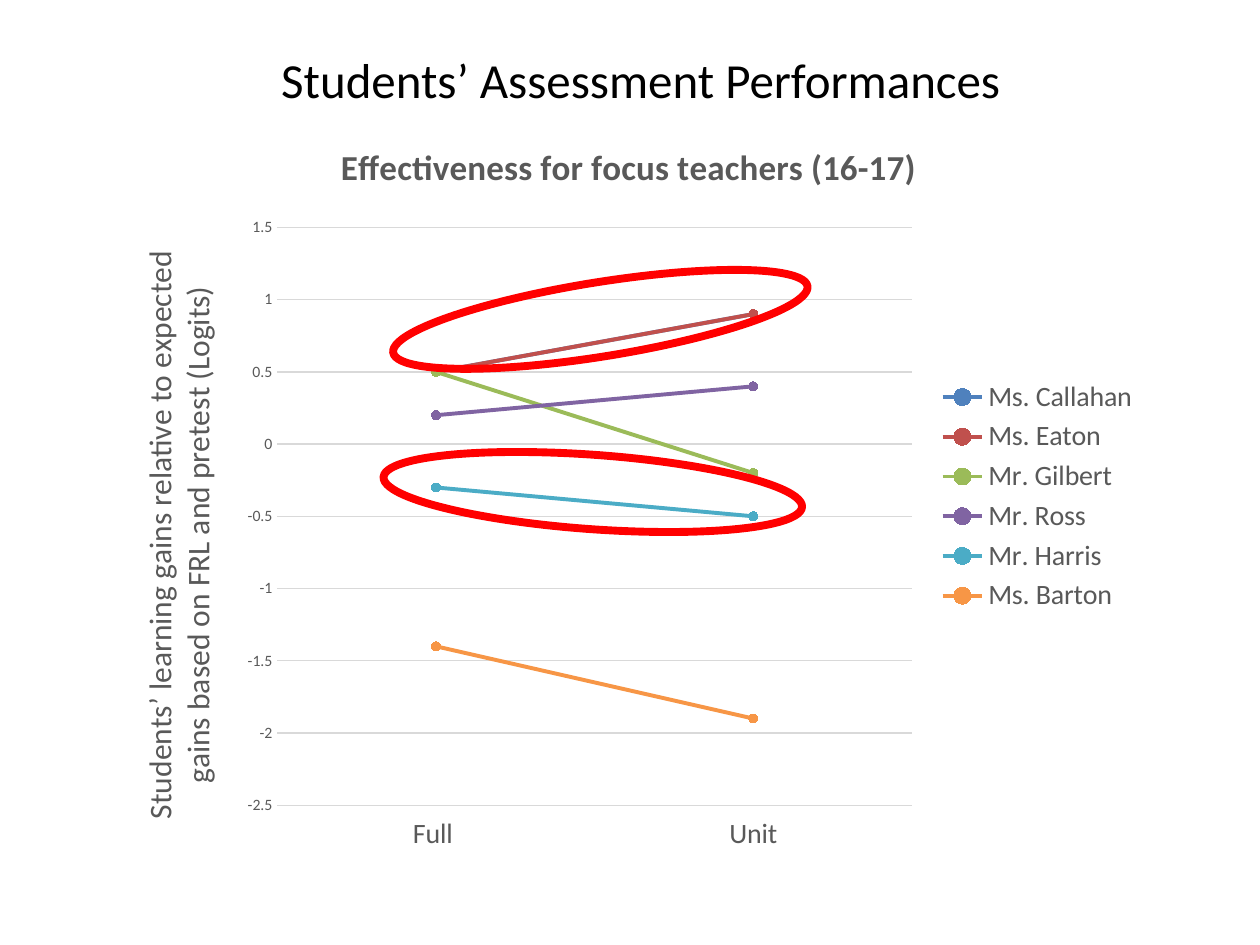
from typing import NamedTuple

from lxml import etree
from pptx import Presentation
from pptx.chart.data import CategoryChartData
from pptx.dml.color import RGBColor
from pptx.enum.chart import (XL_CHART_TYPE, XL_LEGEND_POSITION, XL_MARKER_STYLE,
                             XL_TICK_LABEL_POSITION, XL_TICK_MARK)
from pptx.enum.shapes import MSO_SHAPE
from pptx.enum.text import MSO_ANCHOR, PP_ALIGN
from pptx.oxml.ns import qn
from pptx.util import Inches, Pt

LINE_MARKERS = XL_CHART_TYPE.LINE_MARKERS
LEGEND_RIGHT = XL_LEGEND_POSITION.RIGHT
CIRCLE = XL_MARKER_STYLE.CIRCLE
LABELS_LOW = XL_TICK_LABEL_POSITION.LOW
NO_TICK = XL_TICK_MARK.NONE
ELLIPSE = MSO_SHAPE.OVAL
MIDDLE = MSO_ANCHOR.MIDDLE
CENTER = PP_ALIGN.CENTER

SLIDE_WIDTH, SLIDE_HEIGHT = Inches(10), Inches(7.5)
FONT = "Calibri"
BLACK, GRAY, GRID_GRAY, RED = "000000", "595959", "D9D9D9", "FF0000"


class Box(NamedTuple):
    """Left, top, width and height as shares of the slide's size."""
    left: float
    top: float
    width: float
    height: float

    def lengths(self) -> tuple[int, int, int, int]:
        return (int(self.left * SLIDE_WIDTH), int(self.top * SLIDE_HEIGHT),
                int(self.width * SLIDE_WIDTH), int(self.height * SLIDE_HEIGHT))


class Teacher(NamedTuple):
    name: str
    full: float
    unit: float
    color: str


class Highlight(NamedTuple):
    box: Box
    rotation: float


TITLE_BOX = Box(0.05, 0, 0.917, 1 / 6)
CHART_BOX = Box(0.087, 1 / 7.5, 0.827, 5.88 / 7.5)
# Shares of the chart's size
PLOT_LAYOUT = {"layoutTarget": "inner", "xMode": "edge", "yMode": "edge",
               "x": 0.161, "y": 0.137, "w": 0.609, "h": 0.78}
CHART_TITLE_LAYOUT = {"xMode": "edge", "yMode": "edge", "x": 0.216, "y": 0.013}

TEACHERS = [
    Teacher("Ms. Callahan", 0.5, 0.9, "4F81BD"),
    Teacher("Ms. Eaton", 0.5, 0.9, "C0504D"),
    Teacher("Mr. Gilbert", 0.5, -0.2, "9BBB59"),
    Teacher("Mr. Ross", 0.2, 0.4, "8064A2"),
    Teacher("Mr. Harris", -0.3, -0.5, "4BACC6"),
    Teacher("Ms. Barton", -1.4, -1.9, "F79646"),
]
HIGHLIGHTS = [
    Highlight(Box(0.31, 2.24 / 7.5, 0.333, 0.59 / 7.5), 350.9),
    Highlight(Box(0.304, 3.61 / 7.5, 0.333, 0.59 / 7.5), 4.1),
]


def rgb(color: str) -> RGBColor:
    return RGBColor.from_string(color)


def style_font(font, size: float, color: str = GRAY, bold: bool = False) -> None:
    font.name = FONT
    font.size = Pt(size)
    font.bold = bold
    font.color.rgb = rgb(color)


def style_line(line, color: str, width: float) -> None:
    line.color.rgb = rgb(color)
    line.width = Pt(width)


def set_title_text(title, text: str, size: float, bold: bool = False) -> None:
    title.text_frame.text = text
    style_font(title.text_frame.paragraphs[0].runs[0].font, size, bold=bold)


def set_layout(parent, settings: dict, position: int) -> None:
    """Place a chart part by hand; position is its layout's place among the children."""
    for old_layout in parent.findall(qn("c:layout")):
        parent.remove(old_layout)
    layout = etree.Element(qn("c:layout"))
    parent.insert(position, layout)
    manual = etree.SubElement(layout, qn("c:manualLayout"))
    for tag, value in settings.items():
        etree.SubElement(manual, qn(f"c:{tag}")).set("val", str(value))


def add_title(slide) -> None:
    text_frame = slide.shapes.add_textbox(*TITLE_BOX.lengths()).text_frame
    text_frame.word_wrap = True
    text_frame.vertical_anchor = MIDDLE
    text_frame.text = "Students’ Assessment Performances"
    paragraph = text_frame.paragraphs[0]
    paragraph.alignment = CENTER
    style_font(paragraph.runs[0].font, 28, BLACK)


def style_axes(chart) -> None:
    category_axis, value_axis = chart.category_axis, chart.value_axis
    for axis, size in ((category_axis, 16), (value_axis, 9)):
        axis.major_tick_mark = axis.minor_tick_mark = NO_TICK
        style_font(axis.tick_labels.font, size)
    category_axis.tick_label_position = LABELS_LOW
    style_line(category_axis.format.line, GRID_GRAY, 0.75)
    value_axis.minimum_scale, value_axis.maximum_scale = -2.5, 1.5
    value_axis.major_unit = 0.5
    value_axis.format.line.fill.background()
    style_line(value_axis.major_gridlines.format.line, GRID_GRAY, 0.75)
    set_title_text(value_axis.axis_title,
                   "Students’ learning gains relative to expected "
                   "gains based on FRL and pretest (Logits)", 18)
    body = value_axis.axis_title.text_frame._txBody.bodyPr
    body.set("rot", "-5400000")
    body.set("vert", "horz")


def add_effectiveness_chart(slide) -> None:
    data = CategoryChartData(number_format="General")
    data.categories = ["Full ", "Unit"]
    for teacher in TEACHERS:
        data.add_series(teacher.name, (teacher.full, teacher.unit))
    chart = slide.shapes.add_chart(LINE_MARKERS, *CHART_BOX.lengths(), data).chart
    style_font(chart.font, 10, BLACK)
    set_title_text(chart.chart_title, "Effectiveness for focus teachers (16-17)",
                   20, bold=True)
    set_layout(chart.chart_title._element, CHART_TITLE_LAYOUT, 1)
    style_axes(chart)
    chart.has_legend = True
    chart.legend.position = LEGEND_RIGHT
    chart.legend.include_in_layout = False
    style_font(chart.legend.font, 16)
    chart.plots[0].vary_by_categories = False
    for series, teacher in zip(chart.plots[0].series, TEACHERS):
        series.smooth = False
        style_line(series.format.line, teacher.color, 2.25)
        series.marker.style = CIRCLE
        series.marker.size = 5
        series.marker.format.fill.solid()
        series.marker.format.fill.fore_color.rgb = rgb(teacher.color)
        style_line(series.marker.format.line, teacher.color, 0.75)
    set_layout(chart.plots[0]._element.getparent(), PLOT_LAYOUT, 0)


def add_highlight(slide, highlight: Highlight) -> None:
    ellipse = slide.shapes.add_shape(ELLIPSE, *highlight.box.lengths())
    ellipse.rotation = highlight.rotation
    ellipse.shadow.inherit = False
    ellipse.fill.background()
    style_line(ellipse.line, RED, 4.5)


def main() -> None:
    presentation = Presentation()
    presentation.slide_width, presentation.slide_height = SLIDE_WIDTH, SLIDE_HEIGHT
    slide = presentation.slides.add_slide(presentation.slide_layouts[6])
    add_title(slide)
    add_effectiveness_chart(slide)
    for highlight in HIGHLIGHTS:
        add_highlight(slide, highlight)
    presentation.save("out.pptx")


if __name__ == "__main__":
    main()
